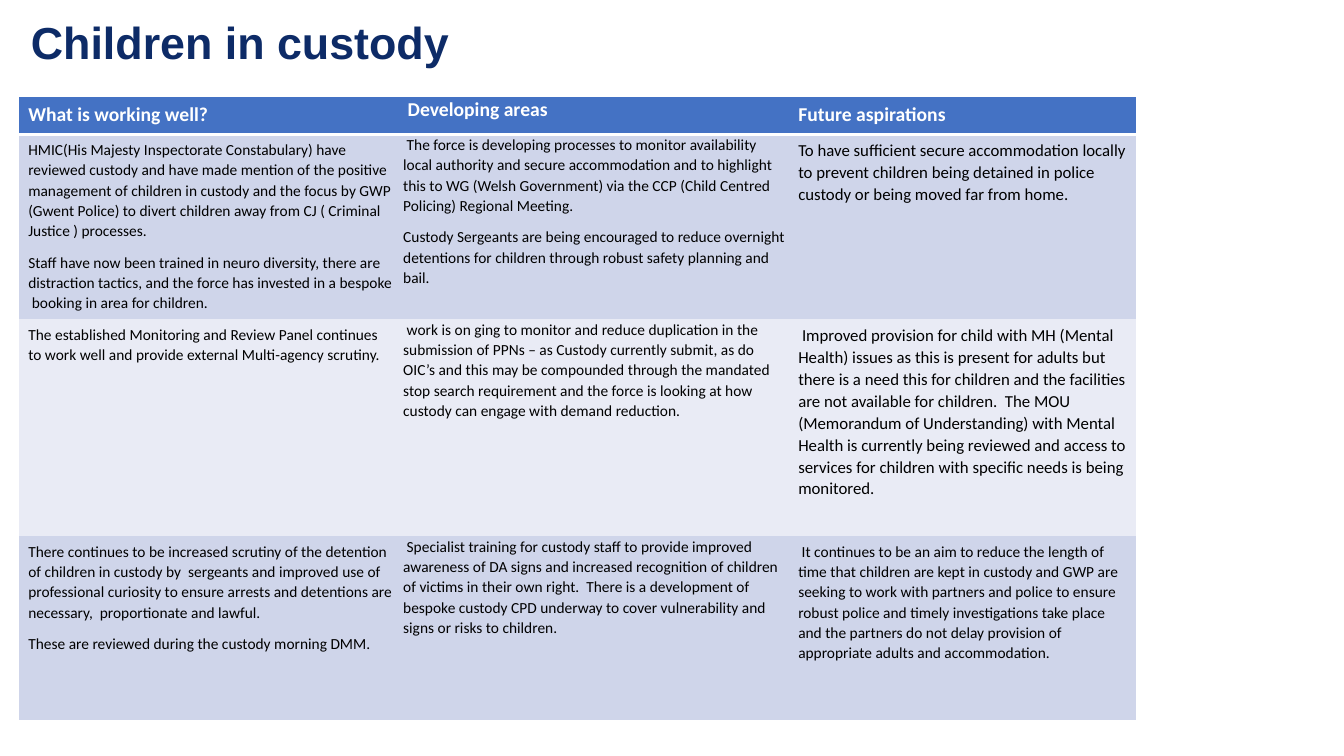
import pptx
import pptx.util
import pptx.dml.color
import pptx.enum.text
import pptx.oxml.ns
from lxml import etree

Pt = pptx.util.Pt
COLORS = {"navy": "0D2B67", "header": "4472C4", "band": "CFD5EA",
          "light": "E9EBF5", "white": "FFFFFF", "black": "000000"}
COL_WIDTHS = [275, 275, 249]
ROW_HEIGHTS = [27, 132, 155, 132]
HEADERS = ["What is working well?", " Developing areas", "Future aspirations"]
ROWS = [
    [
        ["HMIC(His Majesty Inspectorate Constabulary) have reviewed custody and have made mention of the positive management of children in custody and the focus by GWP (Gwent Police) to divert children away from CJ ( Criminal Justice ) processes.",
         "Staff have now been trained in neuro diversity, there are distraction tactics, and the force has invested in a bespoke  booking in area for children."],
        [" The force is developing processes to monitor availability local authority and secure accommodation and to highlight this to WG (Welsh Government) via the CCP (Child Centred Policing) Regional Meeting.",
         "Custody Sergeants are being encouraged to reduce overnight detentions for children through robust safety planning and bail."],
        ["To have sufficient secure accommodation locally to prevent children being detained in police custody or being moved far from home."],
    ],
    [
        ["The established Monitoring and Review Panel continues to work well and provide external Multi-agency scrutiny."],
        [" work is on ging to monitor and reduce duplication in the submission of PPNs – as Custody currently submit, as do OIC’s and this may be compounded through the mandated stop search requirement and the force is looking at how custody can engage with demand reduction."],
        [" Improved provision for child with MH (Mental Health) issues as this is present for adults but there is a need this for children and the facilities are not available for children.  The MOU (Memorandum of Understanding) with Mental Health is currently being reviewed and access to services for children with specific needs is being monitored."],
    ],
    [
        ["There continues to be increased scrutiny of the detention of children in custody by  sergeants and improved use of professional curiosity to ensure arrests and detentions are necessary,  proportionate and lawful.",
         "These are reviewed during the custody morning DMM."],
        [" Specialist training for custody staff to provide improved awareness of DA signs and increased recognition of children of victims in their own right.  There is a development of bespoke custody CPD underway to cover vulnerability and signs or risks to children."],
        [" It continues to be an aim to reduce the length of time that children are kept in custody and GWP are seeking to work with partners and police to ensure robust police and timely investigations take place and the partners do not delay provision of appropriate adults and accommodation."],
    ],
]


def rgb(name):
    return pptx.dml.color.RGBColor.from_string(COLORS[name])


def add_text(tf, paragraphs, size, color="black", font="Calibri", bold=False,
             line_spacing=1.07, space_after=8):
    tf.word_wrap = True
    for i, text in enumerate(paragraphs):
        p = tf.paragraphs[0] if i == 0 else tf.add_paragraph()
        p.line_spacing = line_spacing
        p.space_after = Pt(space_after)
        r = p.add_run()
        r.text = text
        r.font.size = Pt(size)
        r.font.name = font
        r.font.bold = bold
        r.font.color.rgb = rgb(color)


def set_borders(cell, widths):
    qn = pptx.oxml.ns.qn
    tcPr = cell._tc.get_or_add_tcPr()
    for side in "LRTB":
        width = widths.get(side, 0)
        ln = etree.SubElement(tcPr, qn(f"a:ln{side}"), w=str(int(Pt(width))))
        if width:
            fill = etree.SubElement(ln, qn("a:solidFill"))
            etree.SubElement(fill, qn("a:srgbClr"), val=COLORS["white"])
        else:
            etree.SubElement(ln, qn("a:noFill"))


def add_title(s, left, top, width, height):
    sp = s.shapes.add_textbox(Pt(left), Pt(top), Pt(width), Pt(height))
    tf = sp.text_frame
    tf.vertical_anchor = pptx.enum.text.MSO_ANCHOR.MIDDLE
    add_text(tf, ["Children in custody"], 32, color="navy", font="Arial",
             bold=True, line_spacing=0.9, space_after=0)


def fill_cell(cell, row, col, paragraphs):
    header = row == 0
    borders = {}
    if header:
        borders.update(T=1, B=3)
    if row == 1:
        borders["T"] = 3
    if row == len(ROWS):
        borders["B"] = 1
    if col == 0:
        borders["L"] = 1
    if col == len(COL_WIDTHS) - 1:
        borders["R"] = 1
    set_borders(cell, borders)
    cell.fill.solid()
    cell.fill.fore_color.rgb = rgb("header" if header else "band" if row % 2 else "light")
    if col == 1:
        cell.margin_left = cell.margin_right = cell.margin_top = cell.margin_bottom = 0
    if header:
        add_text(cell.text_frame, paragraphs, 14, color="white", bold=True)
    else:
        add_text(cell.text_frame, paragraphs, 12 if col == 2 and row < 3 else 11)


def add_review_table(s, left, top, width, height):
    rows = [[[text] for text in HEADERS]] + ROWS
    table = s.shapes.add_table(len(rows), len(COL_WIDTHS), Pt(left), Pt(top),
                               Pt(width), Pt(height)).table
    for column, share in zip(table.columns, COL_WIDTHS):
        column.width = Pt(width * share / sum(COL_WIDTHS))
    for line, share in zip(table.rows, ROW_HEIGHTS):
        line.height = Pt(height * share / sum(ROW_HEIGHTS))
    for i, row in enumerate(rows):
        for j, paragraphs in enumerate(row):
            fill_cell(table.cell(i, j), i, j, paragraphs)


def main():
    prs = pptx.Presentation()
    prs.slide_width, prs.slide_height = Pt(960), Pt(540)
    s = prs.slides.add_slide(prs.slide_layouts[6])
    add_title(s, 15, 9, 795, 46)
    add_review_table(s, 13, 69, 799, 446)
    prs.save("out.pptx")


if __name__ == "__main__":
    main()
